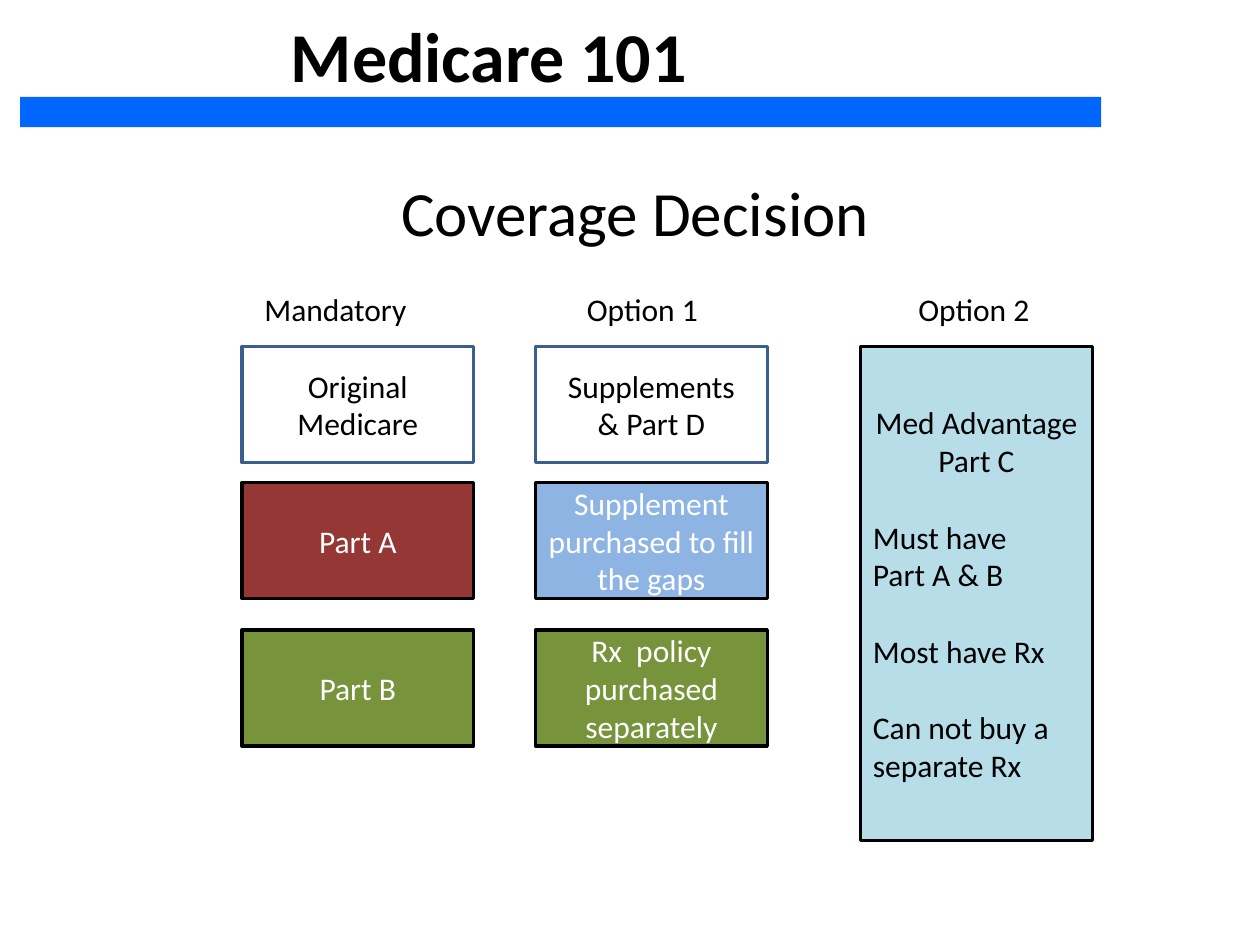
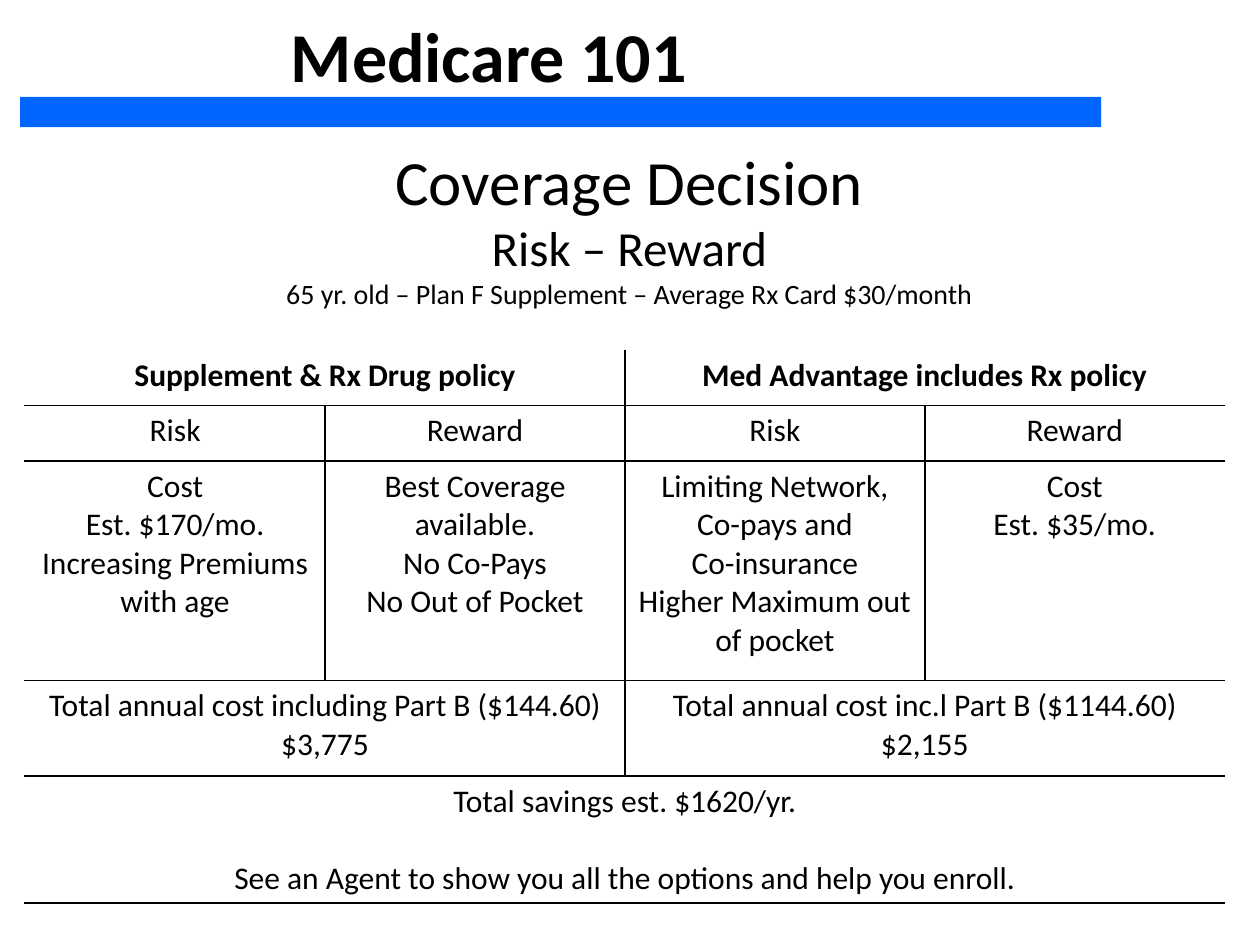
from dataclasses import dataclass
from lxml.etree import SubElement
from pptx import Presentation
from pptx.dml.color import RGBColor
from pptx.enum.shapes import MSO_SHAPE
from pptx.enum.text import MSO_ANCHOR, PP_ALIGN
from pptx.oxml.ns import qn
from pptx.util import Inches, Pt


@dataclass(frozen=True)
class Theme:
    font: str = "Calibri"
    black: str = "000000"
    white: str = "FFFFFF"
    band: str = "0066FF"
    edge: str = "3A5F8C"
    red: str = "953735"
    green: str = "77933C"
    blue: str = "8EB4E3"
    aqua: str = "B7DEE8"
    title: int = 40
    head: int = 36
    sub: int = 28
    body: int = 18
    note: int = 16
    line: int = 22


THEME = Theme()
LEFT = {"alignment": PP_ALIGN.LEFT}
GAP = {"space_before": Pt(THEME.line)}
COLS = (1.92, 4.25, 6.83)
ROWS = (2.75, 3.83, 5)
BOX_W, BOX_H = 1.84, 0.92

LABELS = ((2, "Mandatory"), (4.56, "Option 1"), (7.19, "Option 2"))
BOXES = (
    (0, 0, ["Original", "Medicare"], None),
    (1, 0, ["Supplements", "& Part D"], None),
    (0, 1, ["Part A"], THEME.red),
    (0, 2, ["Part B"], THEME.green),
    (1, 1, ["Supplement purchased to fill the gaps"], THEME.blue),
    (1, 2, ["Rx  policy purchased separately"], THEME.green),
)
PART_C = [
    "Med Advantage", "Part C",
    ("Must have", LEFT | GAP), ("Part A & B", LEFT),
    ("Most have Rx", LEFT | GAP),
    ("Can not buy a separate Rx", LEFT | GAP),
]
HEIGHTS = (0.44, 0.44, 1.74, 0.76, 1)
# Each row lists its cells as (columns spanned, paragraphs).
GRID = (
    ((2, ["Supplement & Rx Drug policy"]), (2, ["Med Advantage includes Rx policy"])),
    ((1, ["Risk"]), (1, ["Reward"]), (1, ["Risk"]), (1, ["Reward"])),
    (
        (1, ["Cost", "Est. $170/mo.", "Increasing Premiums with age"]),
        (1, ["Best Coverage available.", "No Co-Pays", "No Out of Pocket"]),
        (1, ["Limiting Network,", "Co-pays and", "Co-insurance",
             "Higher Maximum out of pocket"]),
        (1, ["Cost", "Est. $35/mo."]),
    ),
    (
        (2, ["Total annual cost including Part B ($144.60)", "$3,775"]),
        (2, ["Total annual cost inc.l Part B ($1144.60)", "$2,155"]),
    ),
    ((4, ["Total savings est. $1620/yr.",
          ("See an Agent to show you all the options and help you enroll.", GAP)]),),
)


def apply(item, values):
    for name, value in values.items():
        setattr(item, name, value)


def write(frame, paras, size=THEME.body, color=THEME.black, bold=False):
    """Fill a frame; a paragraph is a string or (string, format values)."""
    frame.word_wrap = True
    for num, para in enumerate(paras):
        text, extra = (para, {}) if isinstance(para, str) else para
        par = frame.paragraphs[0] if num == 0 else frame.add_paragraph()
        run = par.add_run()
        run.text = text
        look = {"alignment": PP_ALIGN.CENTER} | extra
        points = look.pop("size", size)
        apply(par, look)
        apply(run.font, {"name": THEME.font, "size": Pt(points), "bold": bold})
        run.font.color.rgb = RGBColor.from_string(color)


def add_text(slide, place, paras, **look):
    box = slide.shapes.add_textbox(*map(Inches, place))
    write(box.text_frame, paras, **look)


def add_box(slide, place, fill=None, line=None):
    box = slide.shapes.add_shape(MSO_SHAPE.RECTANGLE, *map(Inches, place))
    box.shadow.inherit = False
    if fill:
        box.fill.solid()
        box.fill.fore_color.rgb = RGBColor.from_string(fill)
    else:
        box.fill.background()
    if line:
        box.line.color.rgb = RGBColor.from_string(line)
        box.line.width = Pt(2)
    else:
        box.line.fill.background()
    box.text_frame.vertical_anchor = MSO_ANCHOR.MIDDLE
    return box


def add_page(deck):
    """Add a slide with the shared title and band."""
    slide = deck.slides.add_slide(deck.slide_layouts[6])
    add_text(slide, (0.67, 0.05, 6.42, 0.77), ["Medicare 101"],
             size=THEME.title, bold=True)
    add_box(slide, (0.16, 0.77, 8.58, 0.24), THEME.band)
    return slide


def set_edges(cell, edges):
    props = cell._tc.get_or_add_tcPr()
    for side, dark in edges.items():
        line = SubElement(props, qn(f"a:ln{side}"), w=str(Pt(1)))
        fill = SubElement(line, qn("a:solidFill"))
        SubElement(fill, qn("a:srgbClr"), val=THEME.black if dark else THEME.white)
    cell.fill.background()


def add_grid(slide, place):
    count = 4
    table = slide.shapes.add_table(len(GRID), count, *map(Inches, place)).table
    apply(table, {"first_row": False, "horz_banding": False})
    for col in table.columns:
        col.width = Inches(place[2] / count)
    for row, height in enumerate(HEIGHTS):
        table.rows[row].height = Inches(height)
        start = 0
        for span, paras in GRID[row]:
            end = start + span - 1
            cell = table.cell(row, start)
            if span > 1:
                cell.merge(table.cell(row, end))
            write(cell.text_frame, paras, bold=row == 0)
            for col in range(start, end + 1):
                set_edges(table.cell(row, col), {
                    "L": col == start > 0,
                    "R": col == end < count - 1,
                    "T": row > 0,
                    "B": True,
                })
            start = end + 1


def add_choices(deck):
    slide = add_page(deck)
    add_text(slide, (1.25, 1.33, 7.58, 0.71), ["Coverage Decision"], size=THEME.head)
    for left, text in LABELS:
        add_text(slide, (left, 2.25, 1.67, 0.4), [(text, LEFT)])
    for col, row, paras, fill in BOXES:
        box = add_box(slide, (COLS[col], ROWS[row], BOX_W, BOX_H), fill,
                      THEME.black if fill else THEME.edge)
        write(box.text_frame, paras, color=THEME.white if fill else THEME.black)
    box = add_box(slide, (COLS[2], ROWS[0], BOX_W, 3.92), THEME.aqua, THEME.black)
    write(box.text_frame, PART_C)


def add_risks(deck):
    slide = add_page(deck)
    add_text(slide, (0.37, 1.08, 9.25, 1.45), [
        ("Coverage Decision", {"size": THEME.head}),
        ("Risk – Reward", {"size": THEME.sub}),
        ("65 yr. old – Plan F Supplement – Average Rx Card $30/month",
         {"size": THEME.note}),
    ])
    add_grid(slide, (0.2, 2.78, 9.52, sum(HEIGHTS)))


def main():
    deck = Presentation()
    apply(deck, {"slide_width": Inches(10), "slide_height": Inches(7.5)})
    add_choices(deck)
    add_risks(deck)
    deck.save("out.pptx")


if __name__ == "__main__":
    main()
